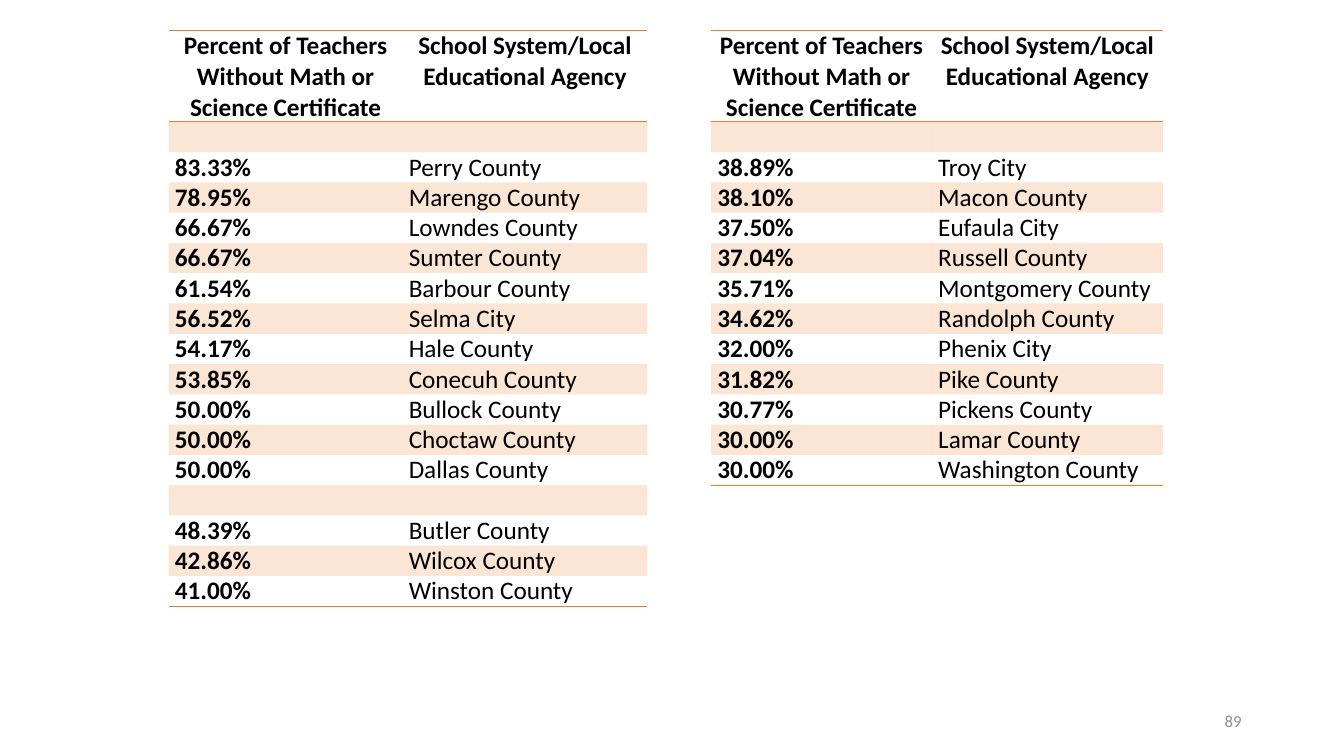
import dataclasses

import lxml.etree
import pptx
import pptx.dml.color
import pptx.enum.text
import pptx.oxml
import pptx.oxml.ns
import pptx.slide
import pptx.table
import pptx.text.text
import pptx.util

COLORS = {"text": "000000", "accent": "ED7D31", "page_number": "8E8E94"}
FONT = "Calibri"
NO_STYLE = "{2D5ABB26-0587-4C30-8999-92F81FD0307C}"
BAND_OPACITY = 20
BORDER_WIDTH = 1
TABLE_TOP = 22.0
HEADER_HEIGHT = 65.0
ROW_HEIGHT = 21.6
CELL_MARGINS = {"margin_left": 4.5, "margin_right": 4.5, "margin_top": 0, "margin_bottom": 0}
HEADERS = (
    "Percent of Teachers Without Math or Science Certificate",
    "School System/Local Educational Agency",
)
EMPTY_ROW = ("", "")


@dataclasses.dataclass
class CertificateTable:
    left: float
    column_widths: tuple[float, float]
    rows: list[tuple[str, str]]


TABLES = [
    CertificateTable(120.5, (167, 175), [
        EMPTY_ROW,
        ("83.33%", "Perry County"),
        ("78.95%", "Marengo County"),
        ("66.67%", "Lowndes County"),
        ("66.67%", "Sumter County"),
        ("61.54%", "Barbour County"),
        ("56.52%", "Selma City"),
        ("54.17%", "Hale County"),
        ("53.85%", "Conecuh County"),
        ("50.00%", "Bullock County"),
        ("50.00%", "Choctaw County"),
        ("50.00%", "Dallas County"),
        EMPTY_ROW,
        ("48.39%", "Butler County"),
        ("42.86%", "Wilcox County"),
        ("41.00%", "Winston County"),
    ]),
    CertificateTable(508, (157.7, 165), [
        EMPTY_ROW,
        ("38.89%", "Troy City"),
        ("38.10%", "Macon County"),
        ("37.50%", "Eufaula City"),
        ("37.04%", "Russell County"),
        ("35.71%", "Montgomery County"),
        ("34.62%", "Randolph County"),
        ("32.00%", "Phenix City"),
        ("31.82%", "Pike County"),
        ("30.77%", "Pickens County"),
        ("30.00%", "Lamar County"),
        ("30.00%", "Washington County"),
    ]),
]


def write_text(paragraph: pptx.text.text._Paragraph, text: str, size: float,
               color: str, bold: bool = False) -> None:
    run = paragraph.add_run()
    run.text = text
    font_format = {"name": FONT, "size": pptx.util.Pt(size), "bold": bold}
    for name, value in font_format.items():
        setattr(run.font, name, value)
    run.font.color.rgb = pptx.dml.color.RGBColor.from_string(COLORS[color])


def fill_cell(cell: pptx.table._Cell, banded: bool) -> None:
    if not banded:
        cell.fill.background()
        return
    cell.fill.solid()
    cell.fill.fore_color.rgb = pptx.dml.color.RGBColor.from_string(COLORS["accent"])
    color_element = cell._tc.tcPr.find(".//" + pptx.oxml.ns.qn("a:srgbClr"))
    alpha = lxml.etree.SubElement(color_element, pptx.oxml.ns.qn("a:alpha"))
    alpha.set("val", str(BAND_OPACITY * 1000))


def add_borders(cell: pptx.table._Cell, sides: list[str]) -> None:
    # Borders come before the fill in the cell properties
    for position, side in enumerate(sides):
        border = pptx.oxml.parse_xml(
            f'<a:{side} {pptx.oxml.ns.nsdecls("a")} w="{pptx.util.Pt(BORDER_WIDTH)}">'
            f'<a:solidFill><a:srgbClr val="{COLORS["accent"]}"/></a:solidFill></a:{side}>'
        )
        cell._tc.tcPr.insert(position, border)


def add_certificate_table(slide: pptx.slide.Slide, content: CertificateTable) -> None:
    rows = [HEADERS, *content.rows]
    height = HEADER_HEIGHT + ROW_HEIGHT * len(content.rows)
    shape = slide.shapes.add_table(
        len(rows), len(HEADERS), pptx.util.Pt(content.left), pptx.util.Pt(TABLE_TOP),
        pptx.util.Pt(sum(content.column_widths)), pptx.util.Pt(height),
    )
    table = shape.table
    table.horz_banding = False
    table._tbl.tblPr.find(pptx.oxml.ns.qn("a:tableStyleId")).text = NO_STYLE
    for column, width in zip(table.columns, content.column_widths):
        column.width = pptx.util.Pt(width)

    for row_index, texts in enumerate(rows):
        is_header = row_index == 0
        table.rows[row_index].height = pptx.util.Pt(HEADER_HEIGHT if is_header else ROW_HEIGHT)
        sides = ["lnT"] if is_header else []
        if is_header or row_index == len(rows) - 1:
            sides.append("lnB")
        for column_index, text in enumerate(texts):
            cell = table.cell(row_index, column_index)
            for name, value in CELL_MARGINS.items():
                setattr(cell, name, pptx.util.Pt(value))
            fill_cell(cell, banded=row_index % 2 == 1)
            add_borders(cell, sides)
            paragraph = cell.text_frame.paragraphs[0]
            if is_header:
                paragraph.alignment = pptx.enum.text.PP_ALIGN.CENTER
            if text:
                write_text(paragraph, text, 18, "text", bold=is_header or column_index == 0)


def add_page_number(slide: pptx.slide.Slide, number: str) -> None:
    left, top, width, height = (pptx.util.Pt(value) for value in (678, 500.5, 216, 28.8))
    text_frame = slide.shapes.add_textbox(left, top, width, height).text_frame
    text_frame.word_wrap = True
    text_frame.vertical_anchor = pptx.enum.text.MSO_ANCHOR.MIDDLE
    paragraph = text_frame.paragraphs[0]
    paragraph.alignment = pptx.enum.text.PP_ALIGN.RIGHT
    write_text(paragraph, number, 12, "page_number")


def main() -> None:
    presentation = pptx.Presentation()
    presentation.slide_width = pptx.util.Pt(960)
    presentation.slide_height = pptx.util.Pt(540)
    # The slide has no title, so it uses the blank layout
    slide = presentation.slides.add_slide(presentation.slide_layouts[6])
    add_page_number(slide, "89")
    for content in TABLES:
        add_certificate_table(slide, content)
    presentation.save("out.pptx")


if __name__ == "__main__":
    main()
